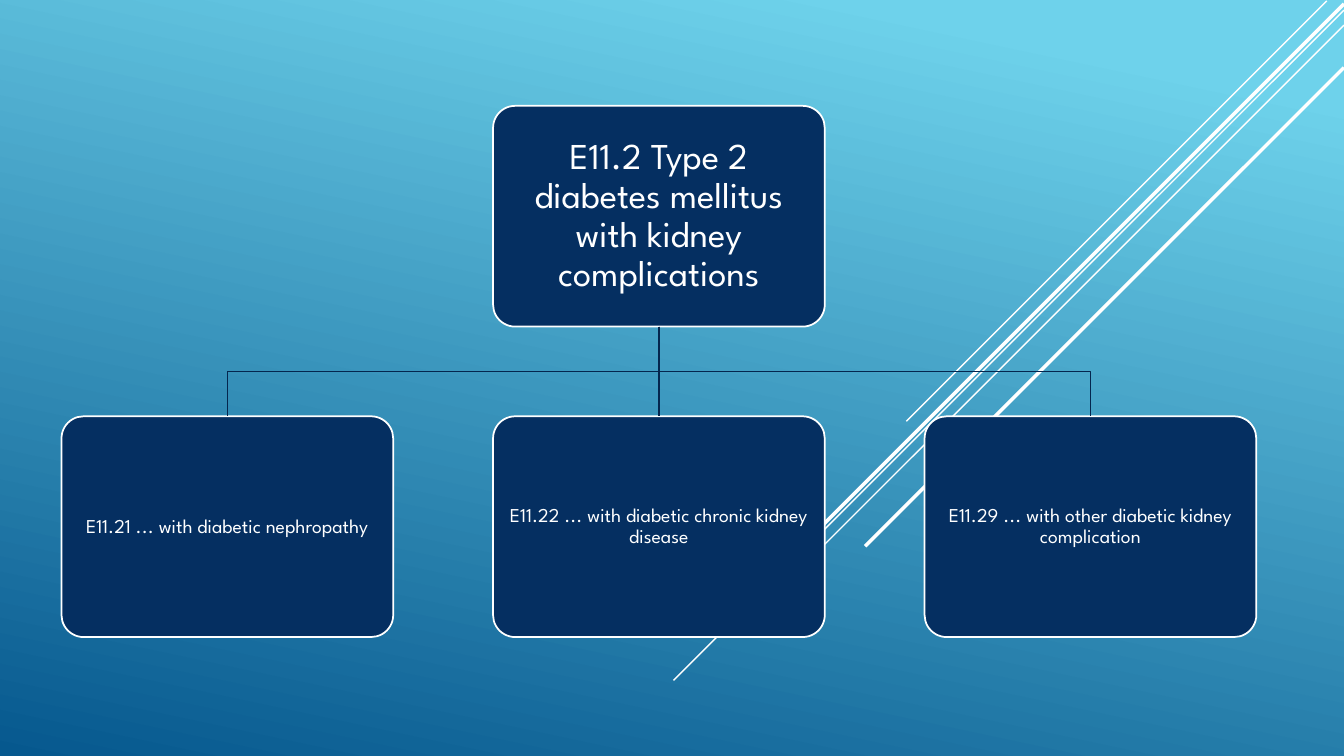
from dataclasses import dataclass

from lxml import etree
from pptx import Presentation, util as u
from pptx.dml.color import RGBColor
from pptx.enum import shapes, text
from pptx.oxml import ns


@dataclass(frozen=True)
class Theme:
    light: str = "6ED2EB"
    deep: str = "06588E"
    navy: str = "052F61"
    link: str = "04264E"
    white: str = "FFFFFF"
    font: str = "League Spartan"
    large: float = 26
    small: float = 14
    thin: float = 1
    edge: float = 1.25
    thick: float = 2.5


@dataclass(frozen=True)
class Grid:
    left: float = 0.61
    top: float = 1.05
    step: float = 4.28
    drop: float = 3.08
    width: float = 3.29
    height: float = 2.19

    def cell(self, col, row):
        return (u.Inches(self.left + col * self.step),
                u.Inches(self.top + row * self.drop),
                u.Inches(self.width), u.Inches(self.height))


class Chart:
    def __init__(self, deck, theme, grid):
        self.deck, self.theme, self.grid = deck, theme, grid
        self.slide = deck.slides.add_slide(deck.slide_layouts[6])
        self.shapes = self.slide.shapes

    def paint(self, line, color, width):
        line.color.rgb = RGBColor.from_string(color)
        line.width = u.Pt(width)

    def backdrop(self):
        fill = self.slide.background.fill
        fill.gradient()
        fill.gradient_angle = 258
        stops = ((0.1, self.theme.light), (1, self.theme.deep))
        for stop, (place, color) in zip(fill.gradient_stops, stops):
            stop.position = place
            stop.color.rgb = RGBColor.from_string(color)

    def line(self, start, end, color, width):
        line = self.shapes.add_connector(
            shapes.MSO_CONNECTOR.STRAIGHT, *start, *end)
        self.paint(line.line, color, width)
        etree.SubElement(line._element.spPr, ns.qn("a:effectLst"))
        return line

    def ray(self, across, down, run, width):
        """Draw a 45 degree ray; across is % of width, the rest % of height."""
        wide, high = self.deck.slide_width, self.deck.slide_height
        x, y, size = (int(wide * across / 100), int(high * down / 100),
                      int(high * run / 100))
        self.line((x, y), (x - size, y + size), self.theme.white, width)

    def box(self, col, row, words, size, inset):
        box = self.shapes.add_shape(shapes.MSO_SHAPE.ROUNDED_RECTANGLE,
                                    *self.grid.cell(col, row))
        box.adjustments[0] = 0.1
        box.shadow.inherit = False
        box.fill.solid()
        box.fill.fore_color.rgb = RGBColor.from_string(self.theme.navy)
        self.paint(box.line, self.theme.white, self.theme.edge)
        frame = box.text_frame
        frame.word_wrap = True
        frame.vertical_anchor = text.MSO_ANCHOR.MIDDLE
        frame.margin_left = frame.margin_right = u.Inches(inset)
        frame.margin_top = frame.margin_bottom = u.Inches(inset)
        para = frame.paragraphs[0]
        para.text = words
        para.alignment = text.PP_ALIGN.CENTER
        para.line_spacing = 0.9
        para.font.name = self.theme.font
        para.font.size = u.Pt(size)
        para.font.color.rgb = RGBColor.from_string(self.theme.white)
        return box

    def join(self, root, leaf):
        x, y = root.left + root.width // 2, root.top + root.height
        end, low = leaf.left + leaf.width // 2, leaf.top
        if x == end:
            line = self.line((x, y), (end, low),
                             self.theme.link, self.theme.edge)
            line.begin_connect(root, 2)
            line.end_connect(leaf, 0)
            return
        mid = (y + low) // 2
        path = self.shapes.build_freeform(x, y)
        path.add_line_segments([(x, mid), (end, mid), (end, low)], close=False)
        bend = path.convert_to_shape()
        bend.shadow.inherit = False
        bend.fill.background()
        self.paint(bend.line, self.theme.link, self.theme.edge)


def main():
    deck = Presentation()
    deck.slide_width, deck.slide_height = u.Inches(13.33), u.Inches(7.5)
    theme = Theme()
    chart = Chart(deck, theme, Grid())

    # Background and slanted rays
    chart.backdrop()
    rays = (
        (98.72, 0.13, 55.6, theme.thin),
        (100, 1.33, 88.67, theme.thin),
        (100, 3.33, 72.27, theme.thin),
        (100, 0.53, 70.73, theme.thick),
        (100, 8.93, 63.33, theme.thick),
    )
    for ray in rays:
        chart.ray(*ray)

    # Parent code
    root = chart.box(1, 0, "E11.2 Type 2 diabetes mellitus with kidney "
                     "complications", theme.large, 0.11)

    # Child codes, each linked to the parent
    codes = (
        "E11.21 ... with diabetic nephropathy",
        "E11.22 ... with diabetic chronic kidney disease",
        "E11.29 ... with other diabetic kidney complication",
    )
    for col, code in enumerate(codes):
        leaf = chart.box(col, 1, code, theme.small, 0.06)
        chart.join(root, leaf)

    deck.save("out.pptx")


if __name__ == "__main__":
    main()
